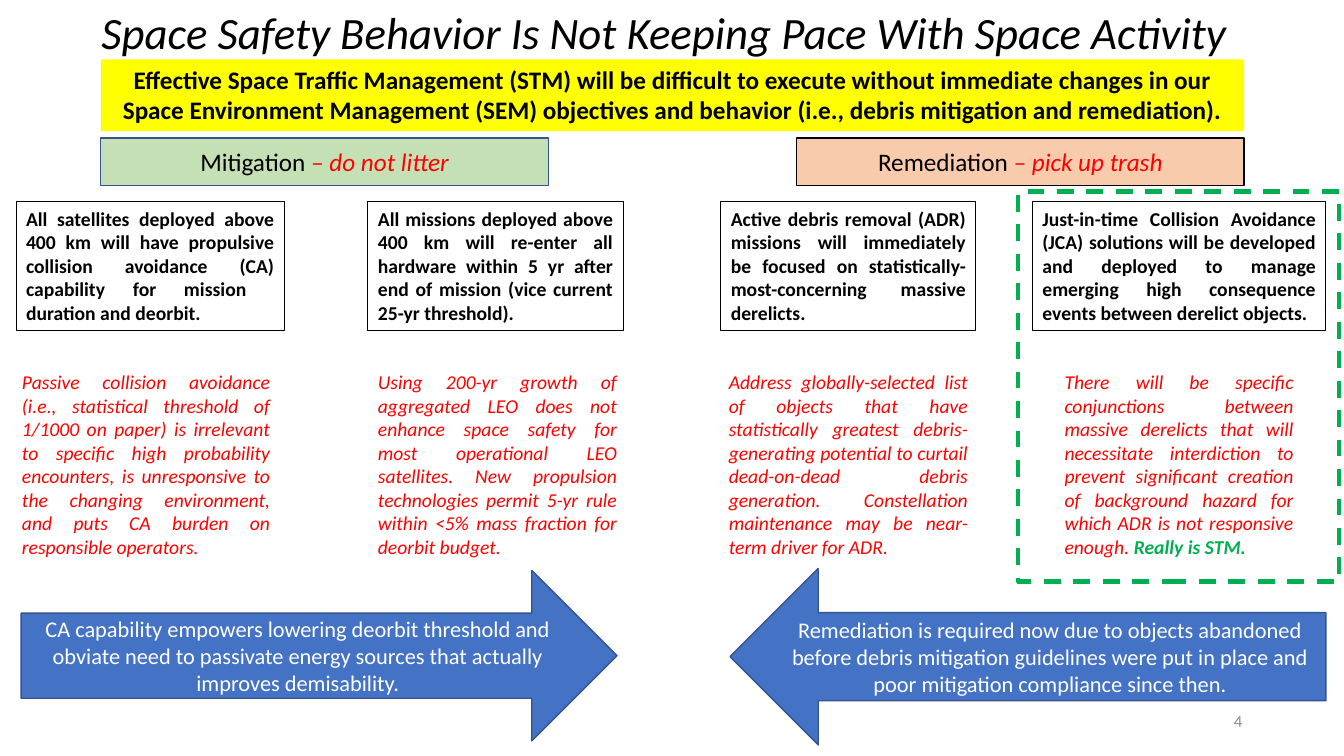
import pptx
import pptx.util
import pptx.dml.color
import pptx.enum.dml
import pptx.enum.shapes
import pptx.enum.text

Inches = pptx.util.Inches
Pt = pptx.util.Pt
RGB = pptx.dml.color.RGBColor
SHAPE = pptx.enum.shapes.MSO_SHAPE
ALIGN = pptx.enum.text.PP_ALIGN
ANCHOR = pptx.enum.text.MSO_ANCHOR

BLACK = RGB(0, 0, 0)
WHITE = RGB(255, 255, 255)
GRAY = RGB(0x8C, 0x8C, 0x8C)
RED = RGB(255, 0, 0)
YELLOW = RGB(255, 255, 0)
LIME = RGB(0xC5, 0xE0, 0xB4)
PEACH = RGB(0xF8, 0xCB, 0xAD)
GREEN = RGB(0, 0xB0, 0x50)
BLUE = RGB(0x44, 0x72, 0xC4)
NAVY = RGB(0x32, 0x54, 0x91)

# Column: rule box left and width, rule, note left and width, note, green end
COLUMNS = [
    (0.16, 2.66,
     "All satellites deployed above 400 km will have propulsive collision "
     "avoidance (CA) capability for mission  duration and deorbit.",
     0.12, 2.66,
     "Passive collision avoidance (i.e., statistical threshold of 1/1000 on "
     "paper) is irrelevant to specific high probability encounters, is "
     "unresponsive to the changing environment, and puts CA burden on "
     "responsible operators.", ""),
    (3.65, 2.53,
     "All missions deployed above 400 km will re-enter all hardware within "
     "5 yr after end of mission (vice current 25-yr threshold).",
     3.65, 2.57,
     "Using 200-yr growth of aggregated LEO does not enhance space safety "
     "for most operational LEO satellites. New propulsion technologies "
     "permit 5-yr rule within <5% mass fraction for deorbit budget.", ""),
    (7.15, 2.53,
     "Active debris removal (ADR) missions will immediately be focused on "
     "statistically-most-concerning massive derelicts.",
     7.13, 2.57,
     "Address globally-selected list of objects that have statistically "
     "greatest debris-generating potential to curtail dead-on-dead debris "
     "generation. Constellation maintenance may be near-term driver for "
     "ADR.", ""),
    (10.24, 2.91,
     "Just-in-time Collision Avoidance (JCA) solutions will be developed and "
     "deployed to manage emerging high consequence events between derelict "
     "objects.",
     10.46, 2.47,
     "There will be specific conjunctions between massive derelicts that "
     "will necessitate interdiction to prevent significant creation of "
     "background hazard for which ADR is not responsive enough. ",
     "Really is STM."),
]


def write(para, text, size=14, color=BLACK, bold=False, italic=False):
    """Add one formatted run to a paragraph."""
    run = para.add_run()
    run.text = text
    font = run.font
    font.name = "Calibri"
    font.size = Pt(size)
    font.color.rgb = color
    font.bold = bold
    font.italic = italic


def frame(shape, align, anchor):
    """Prepare a shape for text and return its first paragraph."""
    body = shape.text_frame
    body.word_wrap = True
    body.vertical_anchor = anchor
    para = body.paragraphs[0]
    para.alignment = align
    return para


def label(slide, box, align=ALIGN.CENTER, anchor=ANCHOR.MIDDLE):
    shape = slide.shapes.add_textbox(*map(Inches, box))
    return frame(shape, align, anchor)


def block(slide, box, kind=SHAPE.RECTANGLE, fill=None, line=None, width=1):
    shape = slide.shapes.add_shape(kind, *map(Inches, box))
    shape.shadow.inherit = False
    if fill is None:
        shape.fill.background()
    else:
        shape.fill.solid()
        shape.fill.fore_color.rgb = fill
    if line is None:
        shape.line.fill.background()
    else:
        shape.line.color.rgb = line
        shape.line.width = Pt(width)
    return shape


def header(slide, left, top, width):
    """Title with the yellow message bar under it."""
    para = label(slide, (left - 0.16, top, width + 0.16, 0.6))
    para.line_spacing = 0.9
    write(para, "Space Safety Behavior Is Not Keeping Pace With Space Activity",
          size=32, italic=True)
    bar = block(slide, (left, top + 0.54, width, 0.71), fill=YELLOW)
    write(frame(bar, ALIGN.CENTER, ANCHOR.TOP),
          "Effective Space Traffic Management (STM) will be difficult to "
          "execute without immediate changes in our Space Environment "
          "Management (SEM) objectives and behavior (i.e., debris mitigation "
          "and remediation).", size=18, bold=True)


def topic(slide, box, name, motto, fill, line):
    """Heading of one half of the slide."""
    para = frame(block(slide, box, fill=fill, line=line),
                 ALIGN.CENTER, ANCHOR.MIDDLE)
    write(para, name, size=18)
    write(para, motto, size=18, color=RED, italic=True)


def column(slide, top, left, width, rule, edge, span, note, end):
    """Boxed rule with its red note below."""
    card = block(slide, (left, top, width, 1.28), line=BLACK, width=0.75)
    write(frame(card, ALIGN.JUSTIFY, ANCHOR.TOP), rule, bold=True)
    para = label(slide, (edge, top + 1.62, span, 1.99),
                 ALIGN.JUSTIFY, ANCHOR.TOP)
    write(para, note, color=RED, italic=True)
    if end:
        write(para, end, color=GREEN, bold=True, italic=True)


def arrow(slide, box, kind, text):
    shape = block(slide, box, kind, BLUE, NAVY)
    write(frame(shape, ALIGN.CENTER, ANCHOR.MIDDLE), text,
          size=16, color=WHITE)


def main():
    deck = pptx.Presentation()
    deck.slide_width = Inches(13.33)
    deck.slide_height = Inches(7.5)
    slide = deck.slides.add_slide(deck.slide_layouts[6])

    # Header and topics
    header(slide, 1, 0.05, 11.34)
    topic(slide, (1, 1.37, 4.44, 0.47), "Mitigation ", "– do not litter",
          LIME, NAVY)
    topic(slide, (7.9, 1.37, 4.44, 0.47), "Remediation ", "– pick up trash",
          PEACH, BLACK)

    # Four columns
    for parts in COLUMNS:
        column(slide, 2, *parts)

    # Conclusions
    arrow(slide, (0.21, 5.66, 5.91, 1.69), SHAPE.RIGHT_ARROW,
          "CA capability empowers lowering deorbit threshold and obviate need "
          "to passivate energy sources that actually improves demisability.")
    arrow(slide, (7.24, 5.64, 5.91, 1.75), SHAPE.LEFT_ARROW,
          "Remediation is required now due to objects abandoned before debris "
          "mitigation guidelines were put in place and poor mitigation "
          "compliance since then.")

    # Dashed outline and slide number
    dash = block(slide, (10.1, 1.9, 3.18, 3.87), line=GREEN, width=3)
    dash.line.dash_style = pptx.enum.dml.MSO_LINE.DASH
    write(label(slide, (9.42, 6.95, 3, 0.4), ALIGN.RIGHT), "4",
          size=12, color=GRAY)

    deck.save("out.pptx")


if __name__ == "__main__":
    main()
